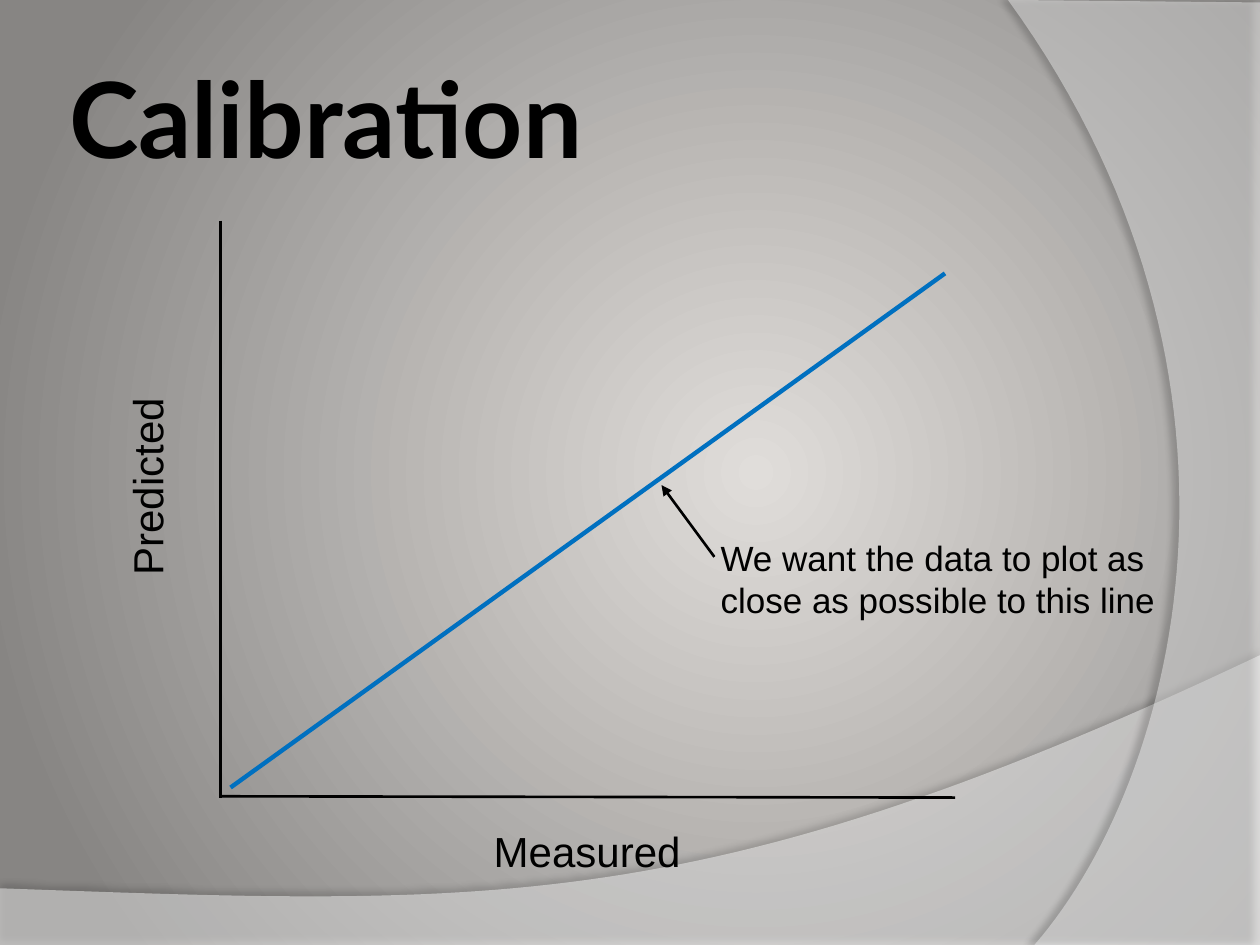
from dataclasses import dataclass

from lxml.etree import SubElement
from pptx import Presentation
from pptx.dml.color import RGBColor
from pptx.enum.shapes import MSO_CONNECTOR
from pptx.enum.text import MSO_ANCHOR, MSO_AUTO_SIZE
from pptx.oxml.ns import qn
from pptx.util import Inches, Pt


@dataclass(frozen=True)
class Theme:
    ink: str = "000000"
    accent: str = "0070C0"
    wave: str = "FFFFFF"
    glow: str = "E0DDDA"
    edge: str = "878583"
    heading_font: str = "Lato"
    body_font: str = "Arial"
    title_size: int = 60
    axis_size: int = 24
    note_size: int = 20


THEME = Theme()


def add_xml(parent, tag, **attributes):
    """Append a DrawingML element to a parent."""
    return SubElement(parent, qn(tag), {key: str(value) for key, value in attributes.items()})


def add_text(slide, text, box, size, font=THEME.body_font, bold=False, wrap=True,
             anchor=MSO_ANCHOR.TOP, inset=0.1, rotation=0, grow=True):
    shape = slide.shapes.add_textbox(*map(Inches, box))
    shape.rotation = rotation
    frame = shape.text_frame
    frame.word_wrap = wrap
    frame.auto_size = MSO_AUTO_SIZE.SHAPE_TO_FIT_TEXT if grow else MSO_AUTO_SIZE.NONE
    frame.vertical_anchor = anchor
    frame.margin_left = frame.margin_right = Inches(inset)
    frame.margin_top = frame.margin_bottom = Inches(0.05)
    run = frame.paragraphs[0].add_run()
    run.text = text
    run.font.name, run.font.size, run.font.bold = font, Pt(size), bold
    run.font.color.rgb = RGBColor.from_string(THEME.ink)
    return shape


def add_line(slide, start, end, color=THEME.ink, width=1.5, arrow=False):
    line = slide.shapes.add_connector(MSO_CONNECTOR.STRAIGHT, *map(Inches, (*start, *end)))
    line.line.color.rgb = RGBColor.from_string(color)
    line.line.width = Pt(width)
    if arrow:
        add_xml(line.line._get_or_add_ln(), "a:tailEnd", type="triangle")
    add_xml(line._element.spPr, "a:effectLst")
    return line


def curve(start, control_1, control_2, end, steps=60):
    """Points along a cubic Bezier curve."""
    points = []
    for step in range(steps + 1):
        t = step / steps
        weights = ((1 - t) ** 3, 3 * t * (1 - t) ** 2, 3 * t ** 2 * (1 - t), t ** 3)
        points.append(tuple(
            sum(weight * value for weight, value in zip(weights, values))
            for values in zip(start, control_1, control_2, end)))
    return points


def add_wave(slide, points, opacity, shadow_opacity, distance, direction):
    points = [(Inches(x), Inches(y)) for x, y in points]
    builder = slide.shapes.build_freeform(*points[0])
    builder.add_line_segments(points[1:], close=True)
    shape = builder.convert_to_shape()
    shape.fill.solid()
    shape.fill.fore_color.rgb = RGBColor.from_string(THEME.wave)
    shape.line.fill.background()
    properties = shape._element.spPr
    fill_color = properties.find(qn("a:solidFill")).find(qn("a:srgbClr"))
    add_xml(fill_color, "a:alpha", val=opacity * 1000)
    effects = add_xml(properties, "a:effectLst")
    shadow = add_xml(effects, "a:outerShdw", blurRad=Pt(4), dist=Pt(distance),
                     dir=direction * 60000, algn="ctr", rotWithShape=0)
    shadow_color = add_xml(shadow, "a:srgbClr", val=THEME.ink)
    add_xml(shadow_color, "a:alpha", val=shadow_opacity * 1000)


def add_backdrop(slide, width, height):
    # Radial gradient centred right of the middle
    fill = slide.background.fill
    fill.gradient()
    for stop, color in zip(fill.gradient_stops, (THEME.glow, THEME.edge)):
        stop.color.rgb = RGBColor.from_string(color)
    gradient = next(slide.element.iter(qn("a:gradFill")))
    gradient.remove(gradient.find(qn("a:lin")))
    circle = add_xml(gradient, "a:path", path="circle")
    add_xml(circle, "a:fillToRect", l=60000, t=50000, r=40000, b=50000)

    # Translucent waves along the bottom and the right
    bottom = [(0, height + 0.01), (width, height + 0.01)]
    bottom += curve((width, 5.2), (5.59, 7.29), (3.91, 7.19), (0, 7.05))
    add_wave(slide, bottom, opacity=45, shadow_opacity=35, distance=3.5, direction=270)
    right = [(width, 0.02), (width, height)]
    right += curve((8.21, height), (9.35, 6.19), (10.18, 3), (8, 0))
    add_wave(slide, right, opacity=40, shadow_opacity=45, distance=4, direction=180)


def add_title(slide, box):
    add_text(slide, "Calibration", box, THEME.title_size, font=THEME.heading_font,
             bold=True, anchor=MSO_ANCHOR.MIDDLE, inset=0.05, grow=False)


def add_plot(slide, left, top, width, height):
    def at(x, y):
        return left + x, top + y

    # Axes and their names
    add_line(slide, at(0, 0), at(0, height))
    add_line(slide, at(width, height), at(0, height - 0.01))
    add_text(slide, "Measured", (*at(2.07, height + 0.17), 1.7, 0.5),
             THEME.axis_size, wrap=False)
    add_text(slide, "Predicted", (*at(-1.4, 1.85), 1.63, 0.5),
             THEME.axis_size, wrap=False, rotation=270)

    # Ideal line with its note
    add_line(slide, at(width - 0.08, 0.42), at(0.08, height - 0.08), THEME.accent, 2.5)
    add_text(slide, "We want the data to plot as close as possible to this line",
             (*at(3.87, 2.46), 3.75, 0.77), THEME.note_size)
    add_line(slide, at(3.92, 2.67), at(3.5, 2.1), arrow=True)


def main():
    presentation = Presentation()
    presentation.slide_width, presentation.slide_height = Inches(10), Inches(7.5)
    slide = presentation.slides.add_slide(presentation.slide_layouts[6])
    add_backdrop(slide, 10, 7.5)
    add_title(slide, (0.5, 0.3, 8.17, 1.25))
    add_plot(slide, 1.75, 1.75, 5.83, 4.58)
    presentation.save("out.pptx")


if __name__ == "__main__":
    main()
